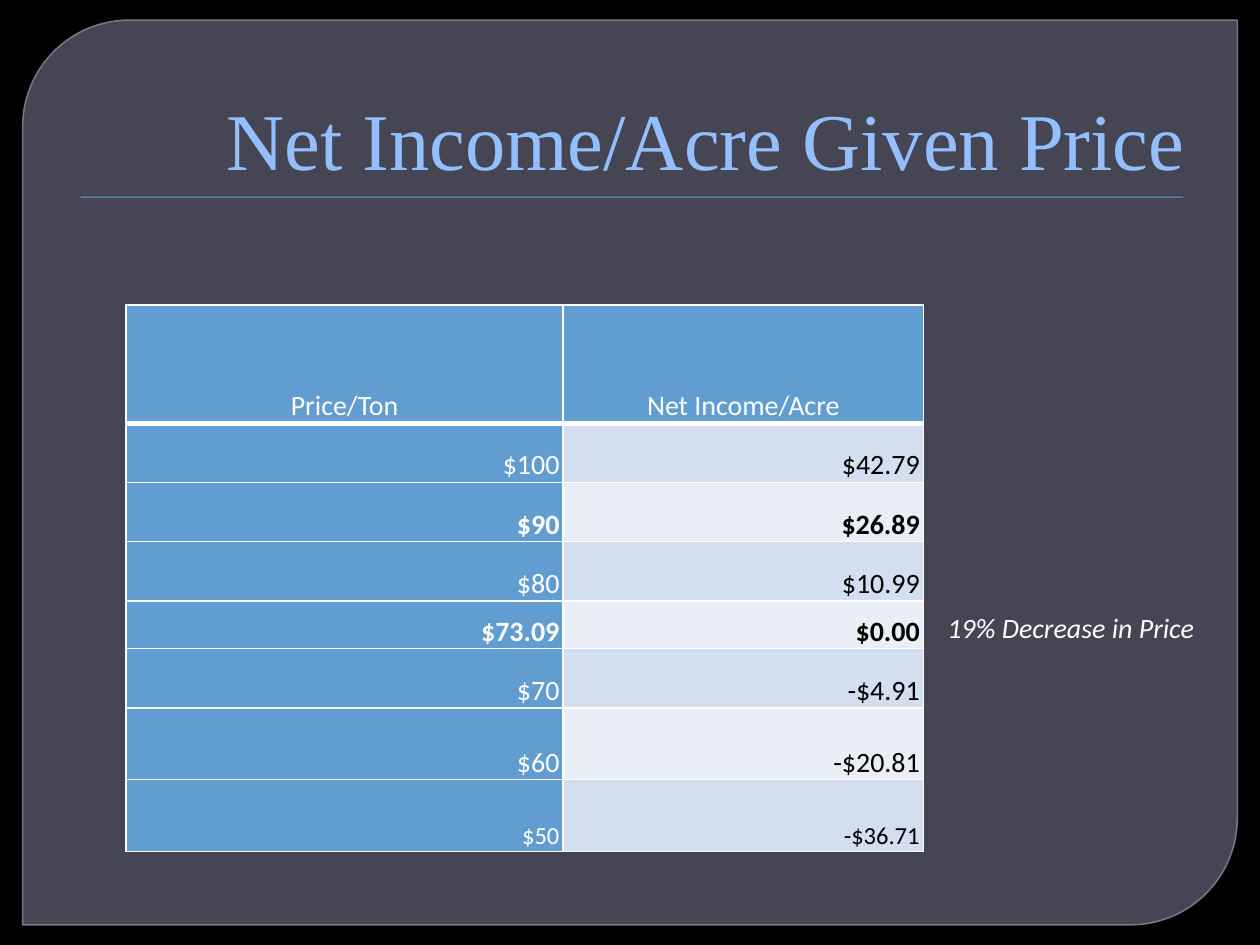
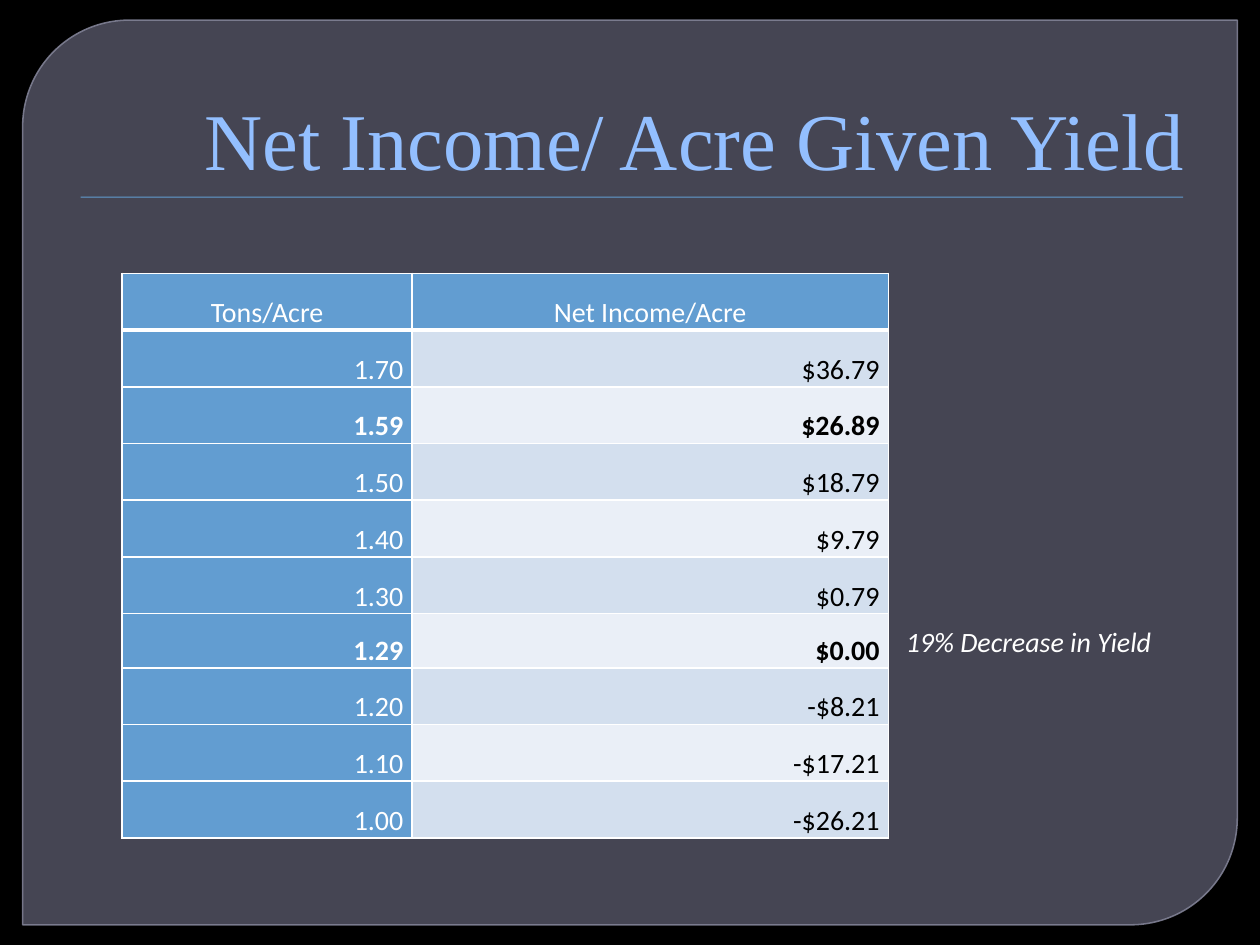
from lxml.etree import SubElement
from pptx import Presentation
from pptx.dml.color import RGBColor
from pptx.enum.shapes import MSO_SHAPE as Shape
from pptx.enum.text import MSO_ANCHOR as Anchor, MSO_AUTO_SIZE as Fit, PP_ALIGN as Align
from pptx.oxml import parse_xml
from pptx.oxml.ns import nsdecls, qn
from pptx.util import Inches, Pt

BLUE, SKY, WHITE, BLACK = "629DD1", "93BFFF", "FFFFFF", "000000"
PANEL, EDGE = "6A6B80", "828397"
BANDS = ["D3DFEE", "EAEFF7"]

SLIDES = [
    dict(
        title="Net Income/Acre Given Price",
        left=1, top=2.42, cols=[3.47, 2.86], inset=0.03,
        heights=[0.94, 0.47, 0.47, 0.47, 0.38, 0.47, 0.57, 0.57],
        rows=[("Price/Ton", "Net Income/Acre"), ("$100", "$42.79"),
              ("$90", "$26.89"), ("$80", "$10.99"), ("$73.09", "$0.00"),
              ("$70", "-$4.91"), ("$60", "-$20.81"), ("$50", "-$36.71")],
        bold=[2, 4], small=[7],
        note="19% Decrease in Price", box=[7.42, 4.8, 2.38, 0.37],
    ),
    dict(
        title="Net Income/ Acre Given Yield",
        left=0.97, top=2.17, cols=[2.3, 3.78], inset=0.07,
        heights=[0.45] * 6 + [0.43] + [0.45] * 3,
        rows=[("Tons/Acre", "Net Income/Acre"), ("1.70", "$36.79"),
              ("1.59", "$26.89"), ("1.50", "$18.79"), ("1.40", "$9.79"),
              ("1.30", "$0.79"), ("1.29", "$0.00"), ("1.20", "-$8.21"),
              ("1.10", "-$17.21"), ("1.00", "-$26.21")],
        bold=[2, 6], small=[],
        note="19% Decrease in Yield", box=[7.09, 4.91, 2.58, 0.37],
    ),
]


def paint(fmt, color, alpha=100):
    """Give a fill a solid colour, with alpha in percent."""
    fmt.solid()
    fmt.fore_color.rgb = RGBColor.from_string(color)
    if alpha < 100:
        tint = fmt.fore_color._xFill.find(qn("a:srgbClr"))
        SubElement(tint, qn("a:alpha")).set("val", str(alpha * 1000))


def write(frame, text, size=16, font="Calibri", color=WHITE, align=Align.LEFT,
          bold=False, italic=False, space=None):
    para = frame.paragraphs[0]
    para.alignment, para.line_spacing = align, space
    run = para.add_run()
    run.text = text
    face = run.font
    face.name, face.size, face.bold, face.italic = font, Pt(size), bold, italic
    face.color.rgb = RGBColor.from_string(color)


prs = Presentation()
prs.slide_width, prs.slide_height = Inches(10), Inches(7.5)

for data in SLIDES:
    slide = prs.slides.add_slide(prs.slide_layouts[5])
    shapes = slide.shapes
    paint(slide.background.fill, BLACK)

    panel = shapes.add_shape(Shape.ROUND_2_DIAG_RECTANGLE, Inches(0.18),
                             Inches(0.16), Inches(9.64), Inches(7.18))
    panel.adjustments[0], panel.adjustments[1] = 0.118, 0
    panel.shadow.inherit = False
    paint(panel.fill, PANEL, 65)
    paint(panel.line.fill, EDGE, 88)
    panel.line.width = Pt(0.87)

    rule = shapes.add_shape(Shape.RECTANGLE, Inches(0.64), Inches(1.56),
                            Inches(8.75), Inches(0.01))
    rule.shadow.inherit = False
    paint(rule.fill, BLUE)
    rule.line.fill.background()

    title = shapes.title
    shapes._spTree.append(title._element)  # bring in front of the panel
    title.left, title.top = Inches(0.5), Inches(0.28)
    title.width, title.height = Inches(9), Inches(1.25)
    frame = title.text_frame
    frame.vertical_anchor, frame.auto_size = Anchor.BOTTOM, Fit.NONE
    write(frame, data["title"], size=46, font="Times New Roman", color=SKY,
          align=Align.RIGHT)

    cols, heights = data["cols"], data["heights"]
    table = shapes.add_table(
        len(heights), len(cols), Inches(data["left"]), Inches(data["top"]),
        Inches(sum(cols)), Inches(sum(heights))).table
    for col, width in zip(table.columns, cols):
        col.width = Inches(width)
    for r, (height, texts) in enumerate(zip(heights, data["rows"])):
        table.rows[r].height = Inches(height)
        for c, text in enumerate(texts):
            cell = table.cell(r, c)
            cell.vertical_anchor = Anchor.BOTTOM
            cell.margin_left = cell.margin_right = Inches(data["inset"])
            cell.margin_top = cell.margin_bottom = 0
            head, label = r == 0, r == 0 or c == 0
            for side in "LRTB":
                width = Pt(3 if head and side == "B" else 1)
                cell._tc.get_or_add_tcPr().append(parse_xml(
                    f'<a:ln{side} {nsdecls("a")} w="{width}"><a:solidFill>'
                    f'<a:srgbClr val="{WHITE}"/></a:solidFill></a:ln{side}>'))
            paint(cell.fill, BLUE if label else BANDS[(r - 1) % 2])
            write(cell.text_frame, text, size=14 if r in data["small"] else 16,
                  color=WHITE if label else BLACK, bold=r in data["bold"],
                  align=Align.CENTER if head else Align.RIGHT, space=1.15)

    note = shapes.add_textbox(*map(Inches, data["box"])).text_frame
    note.word_wrap, note.auto_size = True, Fit.SHAPE_TO_FIT_TEXT
    write(note, data["note"], italic=True)

prs.save("out.pptx")
